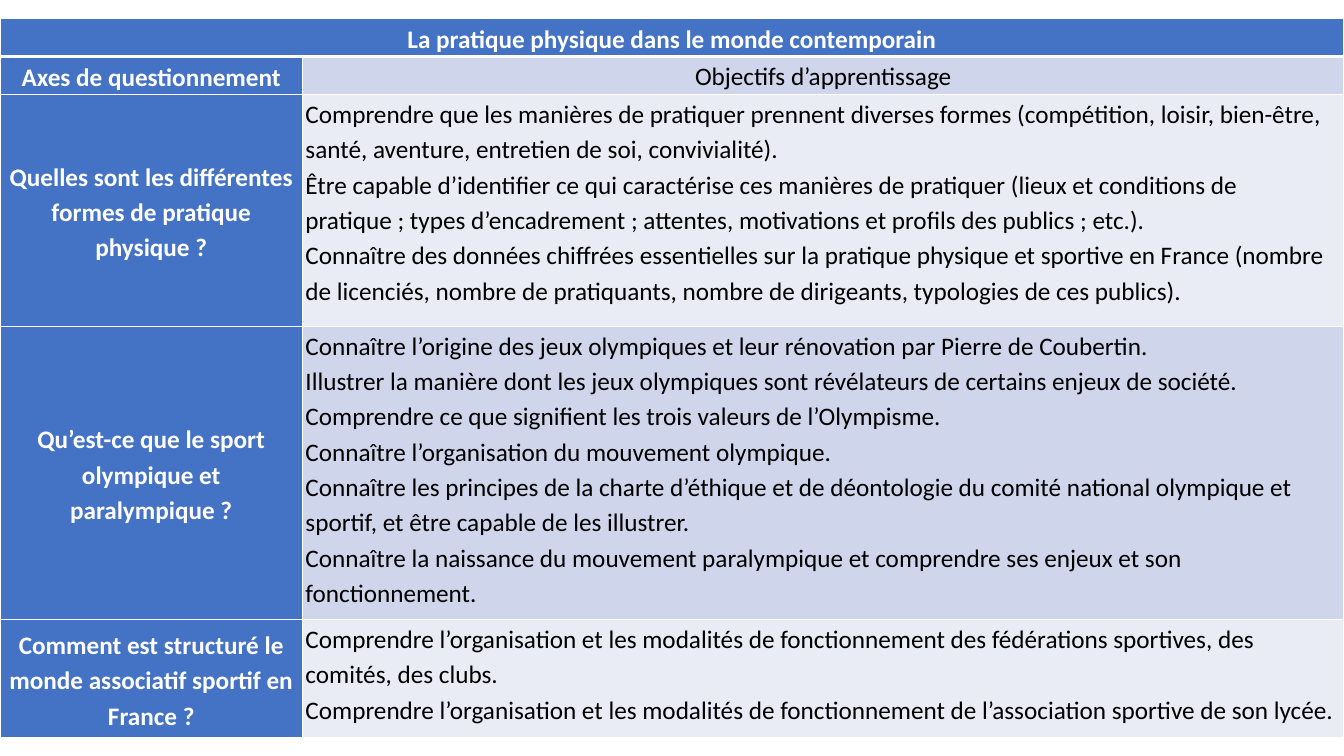
from pptx import Presentation
from pptx.dml.color import RGBColor
from pptx.enum.text import MSO_ANCHOR, PP_ALIGN
from pptx.oxml.ns import qn
from pptx.util import Pt
from lxml import etree

CENTER, LEFT = PP_ALIGN.CENTER, PP_ALIGN.LEFT
MIDDLE, TOP = MSO_ANCHOR.MIDDLE, MSO_ANCHOR.TOP

PX = 9144
SLIDE_W, SLIDE_H = 1333, 750
TABLE_TOP = 18
COL_WIDTHS = [300, 1033]
ROW_HEIGHTS = [38, 38, 230, 291, 117]
SIDE_MARGIN = 3

FONT, FONT_SIZE = "Calibri", 18
WHITE = RGBColor(0xFF, 0xFF, 0xFF)
BLACK = RGBColor(0, 0, 0)
BLUE = RGBColor(0x44, 0x72, 0xC4)
BANDS = [RGBColor(0xCF, 0xD5, 0xEA), RGBColor(0xE9, 0xEB, 0xF5)]

TITLE = "La pratique physique dans le monde contemporain"
ROWS = [
    ("Axes de questionnement", ["Objectifs d’apprentissage"]),
    ("Quelles sont les différentes formes de pratique physique ?", [
        "Comprendre que les manières de pratiquer prennent diverses formes (compétition, loisir, bien-être, santé, aventure, entretien de soi, convivialité).",
        "Être capable d’identifier ce qui caractérise ces manières de pratiquer (lieux et conditions de pratique ; types d’encadrement ; attentes, motivations et profils des publics ; etc.).",
        "Connaître des données chiffrées essentielles sur la pratique physique et sportive en France (nombre de licenciés, nombre de pratiquants, nombre de dirigeants, typologies de ces publics).",
    ]),
    ("Qu’est-ce que le sport olympique et paralympique ?", [
        "Connaître l’origine des jeux olympiques et leur rénovation par Pierre de Coubertin.",
        "Illustrer la manière dont les jeux olympiques sont révélateurs de certains enjeux de société.",
        "Comprendre ce que signifient les trois valeurs de l’Olympisme.",
        "Connaître l’organisation du mouvement olympique.",
        "Connaître les principes de la charte d’éthique et de déontologie du comité national olympique et sportif, et être capable de les illustrer.",
        "Connaître la naissance du mouvement paralympique et comprendre ses enjeux et son fonctionnement.",
    ]),
    ("Comment est structuré le monde associatif sportif en France ?", [
        "Comprendre l’organisation et les modalités de fonctionnement des fédérations sportives, des comités, des clubs.",
        "Comprendre l’organisation et les modalités de fonctionnement de l’association sportive de son lycée.",
    ]),
]


def set_borders(cell, top=1, bottom=1):
    tc_pr = cell._tc.get_or_add_tcPr()
    for side, width in (("L", 1), ("R", 1), ("T", top), ("B", bottom)):
        ln = etree.SubElement(tc_pr, qn(f"a:ln{side}"), w=str(Pt(width)))
        fill = etree.SubElement(ln, qn("a:solidFill"))
        etree.SubElement(fill, qn("a:srgbClr"), val=str(WHITE))


def fill_cell(cell, lines, fill, color, bold, align, anchor, space):
    cell.fill.solid()
    cell.fill.fore_color.rgb = fill
    cell.margin_left = cell.margin_right = SIDE_MARGIN * PX
    cell.margin_top = cell.margin_bottom = 0
    cell.vertical_anchor = anchor
    tf = cell.text_frame
    tf.text = "\n".join(lines)
    for p in tf.paragraphs:
        p.alignment = align
        p.line_spacing = 1.15
        p.space_before = p.space_after = Pt(space)
        for r in p.runs:
            r.font.name = FONT
            r.font.size = Pt(FONT_SIZE)
            r.font.bold = bold
            r.font.color.rgb = color


prs = Presentation()
prs.slide_width, prs.slide_height = SLIDE_W * PX, SLIDE_H * PX
s = prs.slides.add_slide(prs.slide_layouts[6])
table = s.shapes.add_table(
    len(ROW_HEIGHTS), len(COL_WIDTHS), 0, TABLE_TOP * PX,
    sum(COL_WIDTHS) * PX, sum(ROW_HEIGHTS) * PX).table
table.horz_banding = False
for column, width in zip(table.columns, COL_WIDTHS):
    column.width = width * PX
for i, (row, height) in enumerate(zip(table.rows, ROW_HEIGHTS)):
    row.height = height * PX
    for cell in row.cells:
        set_borders(cell, top=3 if i == 1 else 1, bottom=3 if i == 0 else 1)

table.cell(0, 0).merge(table.cell(0, 1))
fill_cell(table.cell(0, 0), [TITLE], BLUE, WHITE, True, CENTER, MIDDLE, 6)
for i, (question, goals) in enumerate(ROWS):
    heading = i == 0
    space = 6 if heading else 0
    fill_cell(table.cell(i + 1, 0), [question], BLUE, WHITE, True,
              CENTER, MIDDLE, space)
    fill_cell(table.cell(i + 1, 1), goals, BANDS[i % 2], BLACK, False,
              CENTER if heading else LEFT, TOP, space)

prs.save("out.pptx")
